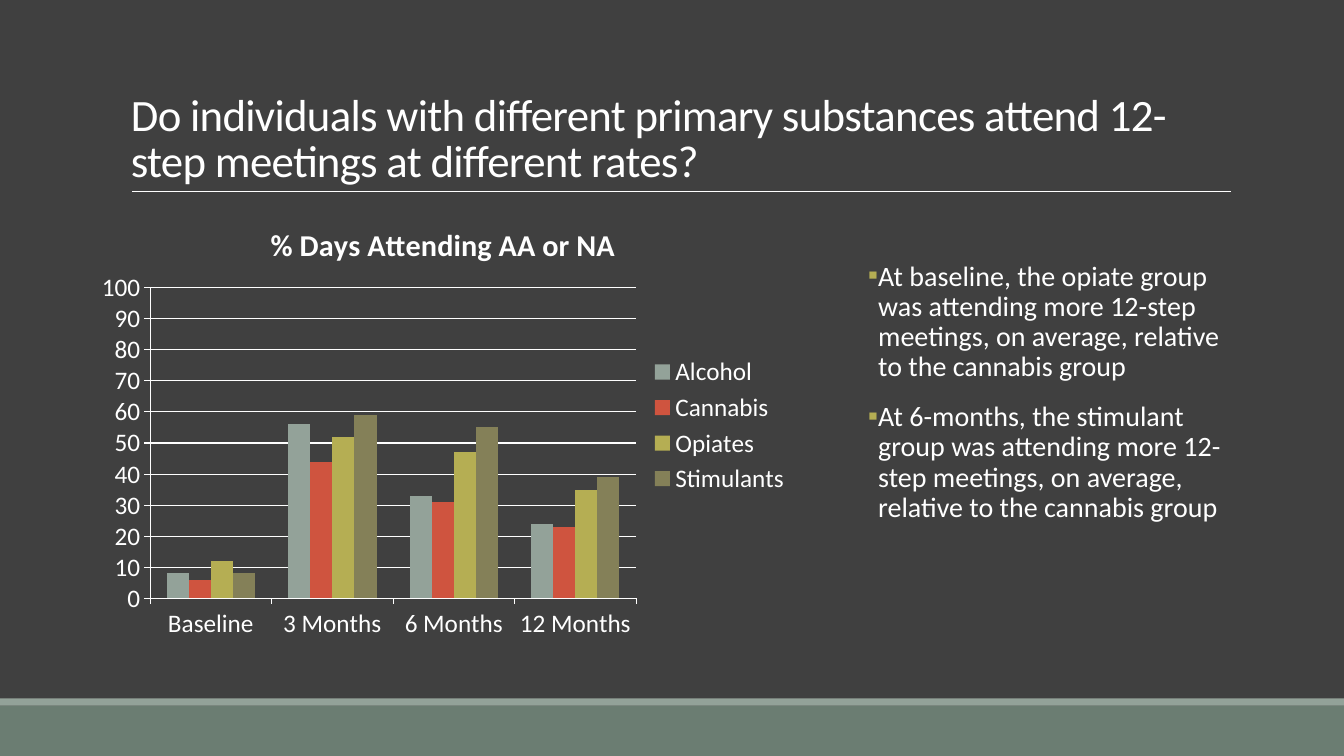
from dataclasses import dataclass

from lxml.etree import SubElement
from pptx import Presentation
from pptx.chart.axis import CategoryAxis, ValueAxis
from pptx.chart.chart import Chart
from pptx.chart.data import CategoryChartData
from pptx.dml.color import RGBColor
from pptx.enum.chart import XL_CHART_TYPE, XL_LEGEND_POSITION, XL_TICK_MARK
from pptx.enum.shapes import MSO_CONNECTOR, MSO_SHAPE
from pptx.enum.text import MSO_ANCHOR
from pptx.oxml.ns import qn
from pptx.slide import Slide
from pptx.text.text import Font, TextFrame, _Paragraph
from pptx.util import Inches, Pt

FACE = "Calibri"
DARK = RGBColor(0x40, 0x40, 0x40)
WHITE = RGBColor(0xFF, 0xFF, 0xFF)
GREEN = RGBColor(0x6B, 0x7D, 0x72)
SAGE = RGBColor(0x93, 0xA2, 0x99)
RED = RGBColor(0xCF, 0x54, 0x3F)
GOLD = RGBColor(0xB5, 0xAE, 0x53)
OLIVE = RGBColor(0x84, 0x80, 0x58)


@dataclass
class Box:
    left: float
    top: float
    width: float
    height: float

    def spread(self) -> tuple:
        return tuple(map(Inches, (self.left, self.top, self.width, self.height)))


@dataclass
class Band:
    box: Box
    color: RGBColor


@dataclass
class Group:
    name: str
    rates: tuple
    color: RGBColor


BANDS = [
    Band(Box(0, 7, 13.33, 0.5), GREEN),
    Band(Box(0, 6.93, 13.33, 0.07), SAGE),
]
TIMES = ["Baseline", "3 Months", "6 Months", "12 Months"]
GROUPS = [
    Group("Alcohol", (8, 56, 33, 24), SAGE),
    Group("Cannabis", (6, 44, 31, 23), RED),
    Group("Opiates", (12, 52, 47, 35), GOLD),
    Group("Stimulants", (8, 59, 55, 39), OLIVE),
]
TITLE = (
    "Do individuals with different primary substances attend "
    "12-step meetings at different rates?"
)
POINTS = [
    "At baseline, the opiate group was attending more 12-step meetings, "
    "on average, relative to the cannabis group",
    "At 6-months, the stimulant group was attending more 12-step meetings, "
    "on average, relative to the cannabis group",
]
PLOT = {"x": 0.09, "y": 0.19, "w": 0.68, "h": 0.7}


def style(font: Font, size: float, bold: bool = False) -> None:
    font.name = FACE
    font.size = Pt(size)
    font.bold = bold
    font.color.rgb = WHITE


def add_band(slide: Slide, band: Band) -> None:
    shape = slide.shapes.add_shape(MSO_SHAPE.RECTANGLE, *band.box.spread())
    shape.shadow.inherit = False
    shape.fill.solid()
    shape.fill.fore_color.rgb = band.color
    shape.line.fill.background()


def add_rule(slide: Slide) -> None:
    ends = map(Inches, (1.31, 1.9, 12.21, 1.9))
    rule = slide.shapes.add_connector(MSO_CONNECTOR.STRAIGHT, *ends)
    rule.line.color.rgb = WHITE
    rule.line.width = Pt(0.5)
    SubElement(rule.line._get_or_add_ln().getparent(), qn("a:effectLst"))


def add_frame(slide: Slide, box: Box) -> TextFrame:
    frame = slide.shapes.add_textbox(*box.spread()).text_frame
    frame.word_wrap = True
    return frame


def add_title(slide: Slide) -> None:
    frame = add_frame(slide, Box(1.2, 0.31, 11, 1.59))
    frame.vertical_anchor = MSO_ANCHOR.BOTTOM
    para = frame.paragraphs[0]
    para.line_spacing = 0.85
    run = para.add_run()
    run.text = TITLE
    style(run.font, 32)
    run._r.get_or_add_rPr().set("spc", "-50")


def add_bullet(para: _Paragraph) -> None:
    props = para._p.get_or_add_pPr()
    props.set("marL", str(Inches(0.1)))
    props.set("indent", str(Inches(-0.1)))
    tint = SubElement(props, qn("a:buClr"))
    SubElement(tint, qn("a:srgbClr"), val=str(GOLD))
    SubElement(props, qn("a:buFont"), typeface=FACE)
    SubElement(props, qn("a:buChar"), char="▪")


def add_points(slide: Slide) -> None:
    frame = add_frame(slide, Box(8.61, 2.55, 3.59, 3.87))
    frame.margin_left = frame.margin_right = 0
    for index, text in enumerate(POINTS):
        para = frame.add_paragraph() if index else frame.paragraphs[0]
        para.line_spacing = 0.9
        para.space_before = Pt(12)
        para.space_after = Pt(2)
        add_bullet(para)
        run = para.add_run()
        run.text = text
        style(run.font, 20)


def style_axis(axis: CategoryAxis | ValueAxis) -> None:
    axis.major_tick_mark = XL_TICK_MARK.OUTSIDE
    axis.minor_tick_mark = XL_TICK_MARK.NONE
    axis.format.line.color.rgb = WHITE
    axis.format.line.width = Pt(0.75)
    style(axis.tick_labels.font, 18)


def place_plot(chart: Chart) -> None:
    area = chart._chartSpace.find(".//" + qn("c:plotArea"))
    layout = area.find(qn("c:layout"))
    if layout is None:
        layout = SubElement(area, qn("c:layout"))
        area.insert(0, layout)
    manual = SubElement(layout, qn("c:manualLayout"))
    SubElement(manual, qn("c:layoutTarget"), val="inner")
    for side in "xy":
        SubElement(manual, qn(f"c:{side}Mode"), val="edge")
    for side, share in PLOT.items():
        SubElement(manual, qn(f"c:{side}"), val=str(share))


def add_rates(slide: Slide) -> None:
    data = CategoryChartData()
    data.categories = TIMES
    for group in GROUPS:
        data.add_series(group.name, group.rates)
    box = Box(0.85, 2.02, 7.09, 4.4)
    chart = slide.shapes.add_chart(
        XL_CHART_TYPE.COLUMN_CLUSTERED, *box.spread(), data
    ).chart
    style(chart.font, 18)
    run = chart.chart_title.text_frame.paragraphs[0].add_run()
    run.text = "% Days Attending AA or NA"
    style(run.font, 21.6, True)
    chart.chart_title.include_in_layout = False
    chart.has_legend = True
    chart.legend.position = XL_LEGEND_POSITION.RIGHT
    chart.legend.include_in_layout = False
    style(chart.legend.font, 18)
    style_axis(chart.category_axis)
    axis = chart.value_axis
    style_axis(axis)
    axis.minimum_scale, axis.maximum_scale, axis.major_unit = 0, 100, 10
    axis.has_major_gridlines = True
    axis.major_gridlines.format.line.color.rgb = WHITE
    axis.major_gridlines.format.line.width = Pt(0.75)
    plot = chart.plots[0]
    plot.gap_width = 150
    plot.vary_by_categories = False
    for series, group in zip(plot.series, GROUPS):
        series.format.fill.solid()
        series.format.fill.fore_color.rgb = group.color
    place_plot(chart)


def main() -> None:
    deck = Presentation()
    deck.slide_width, deck.slide_height = Inches(13.33), Inches(7.5)
    slide = deck.slides.add_slide(deck.slide_layouts[6])
    slide.background.fill.solid()
    slide.background.fill.fore_color.rgb = DARK
    for band in BANDS:
        add_band(slide, band)
    add_rule(slide)
    add_title(slide)
    add_rates(slide)
    add_points(slide)
    deck.save("out.pptx")


if __name__ == "__main__":
    main()
